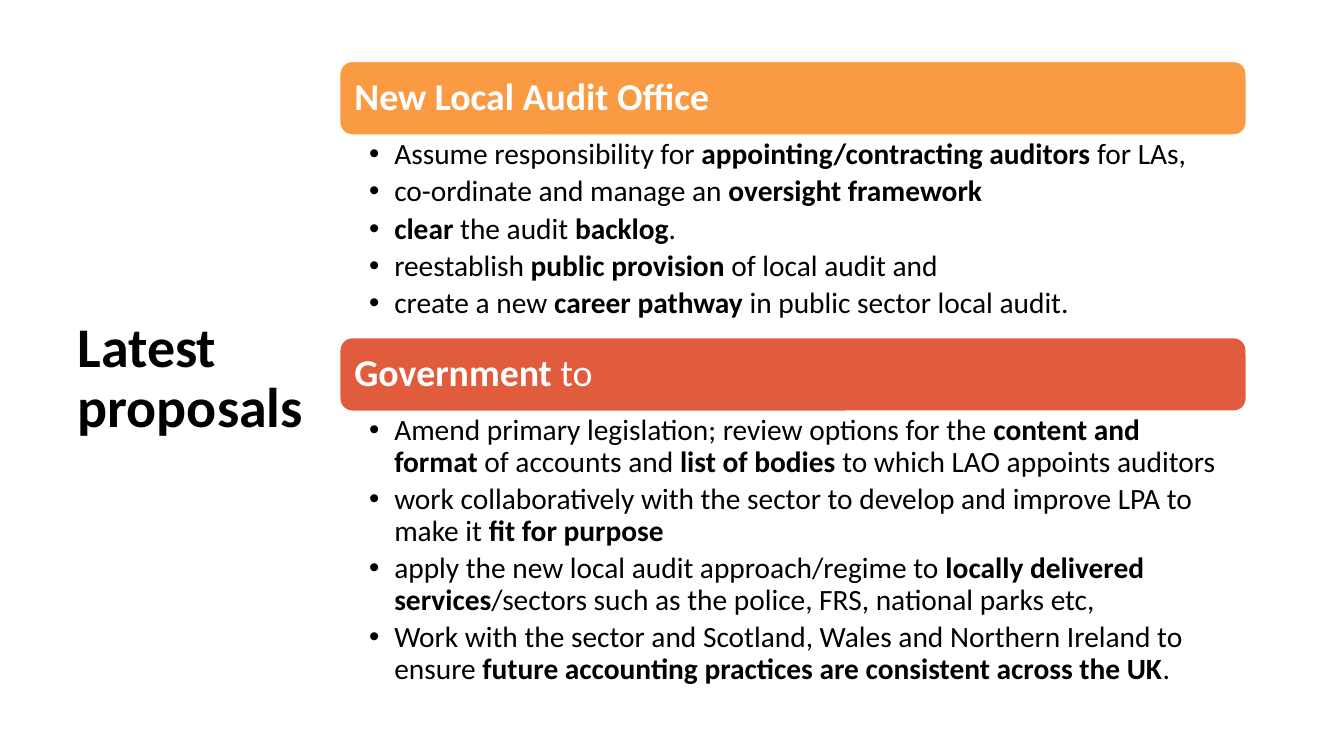
"""Build the slide on the latest local audit proposals."""
import pptx
import pptx.dml.color
import pptx.enum.shapes
import pptx.enum.text
import pptx.oxml.ns
import pptx.util
from lxml import etree

Inches = pptx.util.Inches
Pt = pptx.util.Pt
ANCHOR = pptx.enum.text.MSO_ANCHOR


def color(value):
    return pptx.dml.color.RGBColor.from_string(value)


def write(shape, lines, size, font_color="000000", anchor=ANCHOR.MIDDLE,
          margins=(0.1, 0.05, 0.1, 0.05), space_after=0, bullet=None):
    """Write lines into a shape; text between double asterisks is bold."""
    frame = shape.text_frame
    frame.word_wrap = True
    frame.auto_size = pptx.enum.text.MSO_AUTO_SIZE.NONE
    frame.vertical_anchor = anchor
    (frame.margin_left, frame.margin_top,
     frame.margin_right, frame.margin_bottom) = map(Inches, margins)
    for index, line in enumerate(lines):
        paragraph = frame.add_paragraph() if index else frame.paragraphs[0]
        paragraph.alignment = pptx.enum.text.PP_ALIGN.LEFT
        paragraph.line_spacing = 0.9
        paragraph.space_before = Pt(0)
        paragraph.space_after = Pt(space_after)
        if bullet:
            paragraph.level = 1
            properties = paragraph._p.get_or_add_pPr()
            properties.set("marL", str(Inches(0.25)))
            properties.set("indent", str(Inches(-0.25)))
            mark = etree.SubElement(properties, pptx.oxml.ns.qn("a:buChar"))
            mark.set("char", bullet)
        for part, text in enumerate(line.split("**")):
            if text:
                run = paragraph.add_run()
                run.text = text
                run.font.name = "Calibri"
                run.font.size = Pt(size)
                run.font.bold = part % 2 == 1
                run.font.color.rgb = color(font_color)


presentation = pptx.Presentation()
presentation.slide_width = Inches(13.33)
presentation.slide_height = Inches(7.5)
slide = presentation.slides.add_slide(presentation.slide_layouts[3])
title, *bodies = slide.placeholders

title.left, title.top, title.width, title.height = map(Inches, (0.67, 0.6, 3.01, 6.33))
write(title, ["**Latest proposals**"], 40)

LEFT, WIDTH, HEADER_HEIGHT = 3.37, 8.99, 0.73
sections = [
    ("**New Local Audit Office**", "FA9A42", 0.61, 2.02, [
        "Assume responsibility for **appointing/contracting auditors **for LAs,",
        "co-ordinate and manage an **oversight framework**",
        "**clear** the audit **backlog**.",
        "reestablish **public provision **of local audit and",
        "create a new **career pathway **in public sector local audit.",
    ]),
    ("**Government **to", "E15C3D", 3.35, 2.87, [
        "Amend primary legislation; review options for the **content and format **"
        "of accounts and **list of bodies **to which LAO appoints auditors",
        "work collaboratively with the sector to develop and improve LPA to make it "
        "**fit for purpose**",
        "apply the new local audit approach/regime to **locally delivered services**"
        "/sectors such as the police, FRS, national parks etc,",
        "Work with the sector and Scotland, Wales and Northern Ireland to ensure "
        "**future accounting practices are consistent across the UK**.",
    ]),
]

for body, (heading, fill, top, height, points) in zip(bodies, sections):
    header = slide.shapes.add_shape(
        pptx.enum.shapes.MSO_SHAPE.ROUNDED_RECTANGLE,
        Inches(LEFT), Inches(top), Inches(WIDTH), Inches(HEADER_HEIGHT))
    header.shadow.inherit = False
    header.fill.solid()
    header.fill.fore_color.rgb = color(fill)
    header.line.color.rgb = color("FFFFFF")
    header.line.width = Pt(1)
    write(header, [heading], 27, font_color="FFFFFF", margins=(0.11, 0.11, 0.11, 0.11))

    body.left, body.top = Inches(LEFT), Inches(top + HEADER_HEIGHT)
    body.width, body.height = Inches(WIDTH), Inches(height)
    write(body, points, 21, anchor=ANCHOR.TOP, margins=(0.29, 0.04, 0.21, 0.04),
          space_after=4, bullet="•")

presentation.save("out.pptx")
